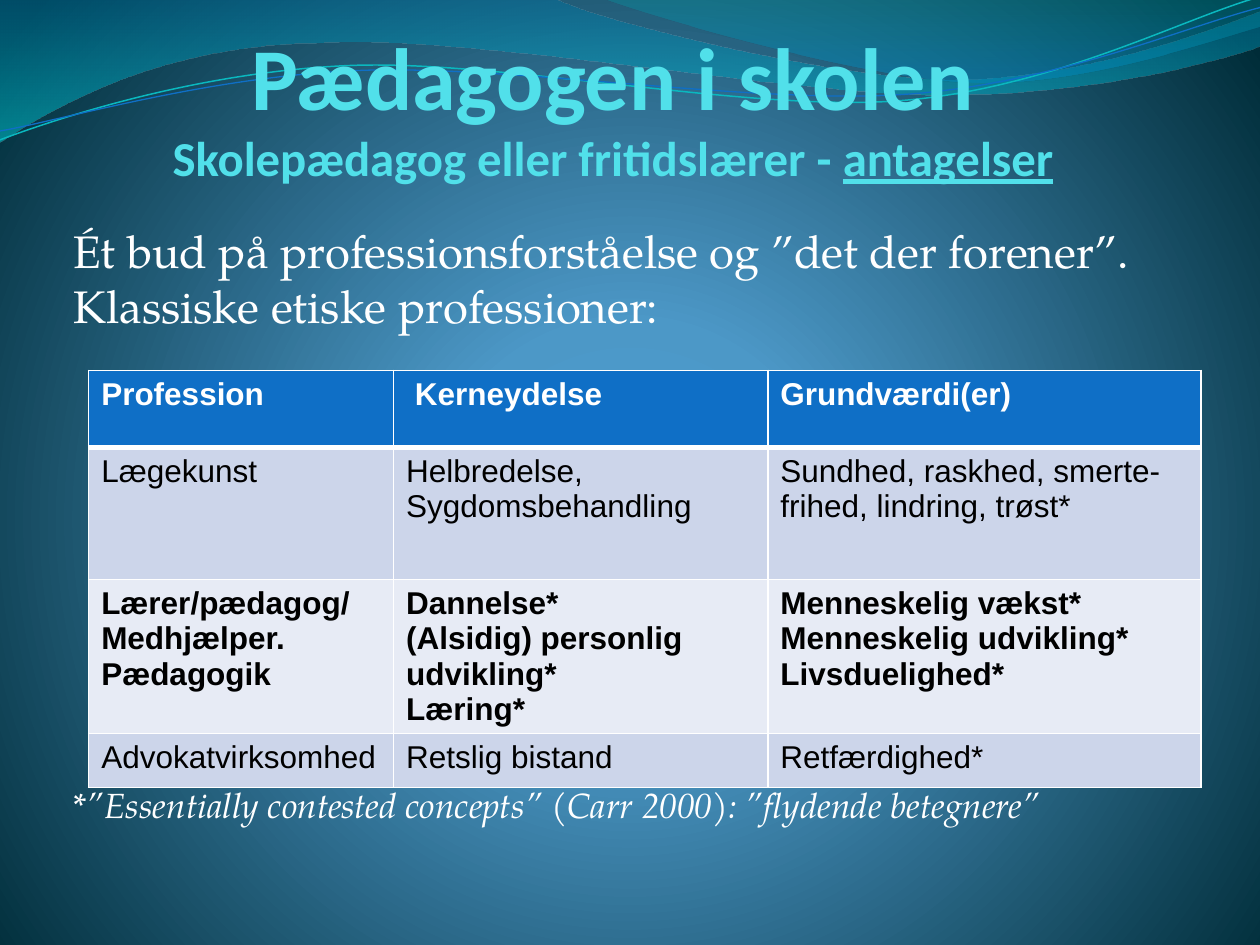
import math

import pptx
import pptx.dml.color
import pptx.enum.text
import pptx.oxml
import pptx.oxml.ns
import pptx.util

# The slide is a grid of 100 columns by 75 rows.
CELL = pptx.util.Inches(0.1)
COLS, ROWS = 100, 75
COLORS = {
    "white": "FFFFFF", "black": "000000", "title": "51E0EA",
    "header": "0F6FC6", "band": "CCD5EA", "highlight": "E7EBF5",
    "glow": "4AA0D6", "mid": "4C98C7", "edge": "002C38",
    "deep": "0074A1", "aqua": "00C6CF", "teal": "00A1A9", "sea": "008BBF",
    "cyan_line": "0AB8BF", "blue_line": "0F6FC6",
}
RADIAL = ('<a:path path="circle"><a:fillToRect l="10000" t="110000" '
          'r="10000" b="100000"/></a:path>')
DOWNWARD = '<a:lin ang="5400000" scaled="0"/>'

# Each wave: start point, then cubic segments (three points) or line ends (one).
BANDS = [
    ((0, -0.1),
     [[(44, -0.1)], [(47.6, 1.7), (66.4, 6.3), (75.8, 6.3)],
      [(85.3, 6.3), (95.8, 2.6), (100, 0.9)],
      [(100.1, 3.6)], [(98.3, 4.4), (87, 7.6), (74.6, 7.5)],
      [(62.2, 7.5), (38.2, 2.8), (25.7, 3.4)], [(12.9, 3.5), (4.6, 8.3), (-0.1, 11.3)],
      [(0, -0.1)]],
     [(0, "deep", 45), (100, "aqua", 55)]),
    ((47.9, -0.1),
     [[(50.9, 1.1), (68.2, 6.2), (76.9, 6.5)], [(85.6, 6.9), (96.1, 3.2), (100, 2.1)],
      [(100, 0)], [(47.9, -0.1)]],
     [(0, "teal", 30), (80, "sea", 45)]),
]
STRANDS = [
    ((0, 11.1),
     [[(4.8, 9.3), (15.8, 5.7), (27.7, 5.2)], [(39.5, 4.7), (59.3, 8.9), (71.3, 8)],
      [(83.3, 7.1), (93.8, 1.5), (99.8, -0.2)]], "cyan_line", 0.85),
    ((0, 10.4),
     [[(4.7, 9.6), (16.4, 6.1), (28.3, 5.6)], [(40.3, 5.1), (59.7, 8.3), (71.7, 7.5)],
      [(83.6, 6.7), (94.1, 2.1), (100, 0.6)]], "blue_line", 0.75),
]
STRAND_TILT = -2.7
STRAND_CENTER = (49.9, 5.8)

TABLE = [
    ["Profession", " Kerneydelse", "Grundværdi(er)"],
    ["Lægekunst", "Helbredelse,\nSygdomsbehandling",
     "Sundhed, raskhed, smerte-frihed, lindring, trøst*"],
    ["Lærer/pædagog/\nMedhjælper.\nPædagogik",
     "Dannelse*\n(Alsidig) personlig\nudvikling*\nLæring*",
     "Menneskelig vækst*\nMenneskelig udvikling*\nLivsduelighed*"],
    ["Advokatvirksomhed", "Retslig bistand", "Retfærdighed*"],
]
COL_WIDTHS = [24.2, 29.7, 34.4]
ROW_HEIGHTS = [6.1, 10.5, 12.2, 4.3]
# Fill, text colour and bold for each row.
ROW_STYLES = [("header", "white", True), ("band", "black", False),
              ("highlight", "black", True), ("band", "black", False)]


def grid(n):
    return round(n * CELL)


def rgb(name):
    return pptx.dml.color.RGBColor.from_string(COLORS[name])


def set_all(obj, values):
    for name, value in values.items():
        setattr(obj, name, value)


def format_font(font, name, size, color, **values):
    set_all(font, {"name": name, "size": pptx.util.Pt(size), **values})
    font.color.rgb = rgb(color)


def add_run(p, text, *font, **values):
    r = p.add_run()
    r.text = text
    format_font(r.font, *font, **values)


def place(sp, box):
    set_all(sp, dict(zip(("left", "top", "width", "height"), map(grid, box))))


def set_gradient(fill, parent, stops, direction):
    """Swap a solid fill for a gradient; stops are (position, colour, opacity)."""
    fill.solid()
    gs = "".join(
        f'<a:gs pos="{pos * 1000}"><a:srgbClr val="{COLORS[c]}">'
        f'<a:alpha val="{alpha * 1000}"/></a:srgbClr></a:gs>' for pos, c, alpha in stops)
    solid = parent.find(pptx.oxml.ns.qn("a:solidFill"))
    parent.replace(solid, pptx.oxml.parse_xml(
        f'<a:gradFill {pptx.oxml.ns.nsdecls("a")} rotWithShape="1">'
        f'<a:gsLst>{gs}</a:gsLst>{direction}</a:gradFill>'))


def turn(point, center, degrees):
    a = math.radians(degrees)
    x, y = point[0] - center[0], point[1] - center[1]
    return (center[0] + x * math.cos(a) - y * math.sin(a),
            center[1] + x * math.sin(a) + y * math.cos(a))


def bend(sp, segments):
    """Join each three line steps of a cubic segment into one curve."""
    steps = iter(sp._element.xpath(".//a:lnTo"))
    for seg in segments:
        first, *rest = [next(steps) for _ in seg]
        if rest:
            curve = pptx.oxml.parse_xml(f'<a:cubicBezTo {pptx.oxml.ns.nsdecls("a")}/>')
            first.addprevious(curve)
            for step in (first, *rest):
                curve.append(step[0])
                step.getparent().remove(step)


def add_wave(s, box, start, segments, close, layer, tilt=0):
    """Draw a wave; a tilted one is laid flat first, then rotated."""
    flat = [turn(pt, STRAND_CENTER, -tilt) for pt in [start, *sum(segments, [])]]
    points = [(grid(box[0] + x), grid(box[1] + y)) for x, y in flat]
    builder = s.shapes.build_freeform(*points[0])
    builder.add_line_segments(points[1:], close=close)
    sp = builder.convert_to_shape()
    bend(sp, segments)
    sp.rotation = tilt
    sp.shadow.inherit = False
    s.shapes._spTree.insert(2 + layer, sp._element)  # behind the placeholders
    return sp


def add_backdrop(s, box):
    fill = s.background.fill
    fill.solid()
    set_gradient(fill, s._element.xpath(".//p:bgPr")[0],
                 [(0, "glow", 100), (25, "mid", 100), (100, "edge", 100)], RADIAL)
    for i, (start, segments, stops) in enumerate(BANDS):
        sp = add_wave(s, box, start, segments, True, i)
        set_gradient(sp.fill, sp._element.spPr, stops, DOWNWARD)
        sp.line.fill.background()
    for i, (start, segments, color, width) in enumerate(STRANDS, len(BANDS)):
        sp = add_wave(s, box, start, segments, False, i, STRAND_TILT)
        sp.fill.background()
        sp.line.color.rgb = rgb(color)
        sp.line.width = pptx.util.Pt(width)


def format_frame(tf, anchor, margin):
    set_all(tf, {"word_wrap": True, "auto_size": pptx.enum.text.MSO_AUTO_SIZE.NONE,
                 "vertical_anchor": anchor, "margin_left": 0, "margin_right": grid(0.2),
                 "margin_top": grid(margin), "margin_bottom": grid(margin)})


def fill_title(sp, box):
    place(sp, box)
    format_frame(sp.text_frame, pptx.enum.text.MSO_ANCHOR.BOTTOM, 0)
    p = sp.text_frame.paragraphs[0]
    p.alignment = pptx.enum.text.PP_ALIGN.CENTER
    add_run(p, "Pædagogen i skolen", "Calibri", 50.4, "title", bold=True)
    p.add_line_break()
    add_run(p, "Skolepædagog eller fritidslærer - ", "Calibri", 27.9, "title", bold=True)
    add_run(p, "antagelser", "Calibri", 27.9, "title", bold=True, underline=True)


def fill_body(sp, box):
    place(sp, box)
    tf = sp.text_frame
    format_frame(tf, pptx.enum.text.MSO_ANCHOR.TOP, 0.5)
    intro, note = tf.paragraphs[0], tf.add_paragraph()
    add_run(intro, "Ét bud på professionsforståelse og ”det der forener”. "
            "Klassiske etiske professioner:", "TeX Gyre Pagella", 26, "white")
    add_run(note, "*”Essentially contested concepts” (Carr 2000): ”flydende betegnere”",
            "TeX Gyre Pagella", 20, "white", italic=True)
    for p in (intro, note):
        p.alignment = pptx.enum.text.PP_ALIGN.LEFT
    note.space_before = pptx.util.Pt(258)  # leaves room for the table


def set_borders(cell, top, bottom):
    tcPr = cell._tc.get_or_add_tcPr()
    for i, (side, width) in enumerate(zip("LRTB", (1, 1, top, bottom))):
        tcPr.insert(i, pptx.oxml.parse_xml(
            f'<a:ln{side} {pptx.oxml.ns.nsdecls("a")} w="{pptx.util.Pt(width)}"><a:solidFill>'
            f'<a:srgbClr val="{COLORS["white"]}"/></a:solidFill></a:ln{side}>'))


def add_professions(s, left, top):
    box = (left, top, sum(COL_WIDTHS), sum(ROW_HEIGHTS))
    table = s.shapes.add_table(len(TABLE), len(COL_WIDTHS), *map(grid, box)).table
    for col, width in zip(table.columns, COL_WIDTHS):
        col.width = grid(width)
    for i, (row, height) in enumerate(zip(table.rows, ROW_HEIGHTS)):
        row.height = grid(height)
        fill, color, bold = ROW_STYLES[i]
        for cell, text in zip(row.cells, TABLE[i]):
            cell.text = text
            cell.fill.solid()
            cell.fill.fore_color.rgb = rgb(fill)
            set_borders(cell, 3 if i == 1 else 1, 3 if i == 0 else 1)
            for p in cell.text_frame.paragraphs:
                format_font(p.runs[0].font, "Arial", 18, color, bold=bold)


prs = pptx.Presentation()
prs.slide_width, prs.slide_height = grid(COLS), grid(ROWS)
s = prs.slides.add_slide(prs.slide_layouts[0])
add_backdrop(s, (0, 0, COLS, ROWS))
fill_title(s.shapes.title, (5.8, 2.3, 85.9, 12.5))
fill_body(s.placeholders[1], (5.8, 17.2, 85.9, 54.7))
add_professions(s, 7.04, 29.4)
prs.save("out.pptx")
